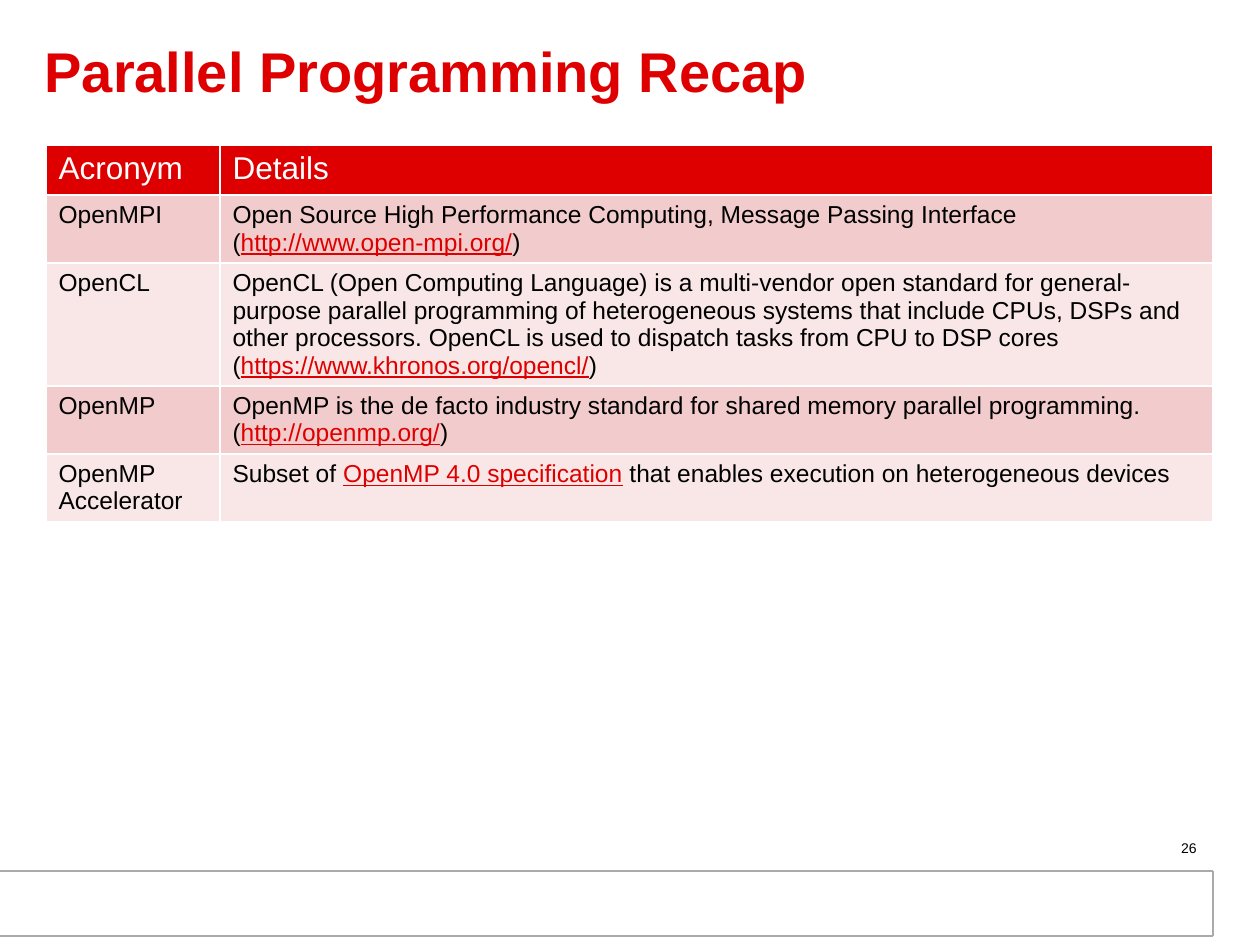
from lxml import etree
from pptx import Presentation
from pptx.dml.color import RGBColor
from pptx.enum.shapes import MSO_CONNECTOR, MSO_SHAPE
from pptx.enum.text import MSO_ANCHOR, PP_ALIGN
from pptx.oxml.ns import qn
from pptx.util import Emu, Pt

LEFT, RIGHT = PP_ALIGN.LEFT, PP_ALIGN.RIGHT
MIDDLE = MSO_ANCHOR.MIDDLE
RECT, STRAIGHT = MSO_SHAPE.RECTANGLE, MSO_CONNECTOR.STRAIGHT
FONT = "Arial"
RED, BLACK, WHITE, GRAY = "DE0000", "000000", "FFFFFF", "AAAAAA"
BANDS = ["F2CCCC", "F9E7E7"]
COL_WIDTHS = [174, 993]
ROW_HEIGHTS = [50, 68, 123, 68, 67]

HEADER = ["Acronym", "Details"]
ROWS = [
    ("OpenMPI", [
        ["Open Source High Performance Computing, Message Passing Interface"],
        ["(", "http://www.open-mpi.org/", ")"]]),
    ("OpenCL", [
        ["OpenCL (Open Computing Language) is a multi-vendor open standard for "
         "general-purpose parallel programming of heterogeneous systems that "
         "include CPUs, DSPs and other processors. OpenCL is used to dispatch "
         "tasks from CPU to DSP cores"],
        ["(", "https://www.khronos.org/opencl/", ")"]]),
    ("OpenMP", [
        ["OpenMP is the de facto industry standard for shared memory parallel "
         "programming."],
        ["(", "http://openmp.org/", ")"]]),
    ("OpenMP Accelerator", [
        ["Subset of ", "OpenMP 4.0 specification",
         " that enables execution on heterogeneous devices"]]),
]


def px(n):
    """Turn pixels at 126 to the inch into EMU."""
    return Emu(round(n * 914400 / 126))


def rgb(color):
    """Turn a hex string into a colour."""
    return RGBColor.from_string(color)


def set_font(font, size, color, bold=False):
    """Format a font."""
    font.name, font.size, font.bold = FONT, Pt(size), bold
    font.color.rgb = rgb(color)


def add_title(s, text):
    """Fill and place the title placeholder."""
    sp = s.shapes.title
    sp.left, sp.top, sp.width, sp.height = px(32), px(19), px(1165), px(112)
    tf = sp.text_frame
    tf.text, tf.vertical_anchor = text, MIDDLE
    p = tf.paragraphs[0]
    p.alignment, p.line_spacing = LEFT, 0.85
    set_font(p.font, 32, RED, True)


def add_line(s, x1, y1, x2, y2):
    """Draw a thin gray line without a shadow."""
    line = s.shapes.add_connector(STRAIGHT, px(x1), px(y1), px(x2), px(y2))
    line.line.color.rgb, line.line.width = rgb(GRAY), Pt(0.75)
    etree.SubElement(line._element.spPr, qn("a:effectLst"))


def add_footer_frame(s):
    """Draw the white footer strip and its three edges."""
    sp = s.shapes.add_shape(RECT, px(6), px(872), px(1205), px(63))
    sp.shadow.inherit = False
    sp.fill.solid()
    sp.fill.fore_color.rgb = rgb(WHITE)
    sp.line.fill.background()
    for y in (936, 871):
        add_line(s, -1, y, 1213, y)
    add_line(s, 1213, 936, 1213, 871)


def fill_cell(cell, paragraphs, size, color, fill):
    """Write paragraphs of runs, every second run styled as a link."""
    cell.fill.solid()
    cell.fill.fore_color.rgb = rgb(fill)
    tf = cell.text_frame
    for i, runs in enumerate(paragraphs):
        p = tf.add_paragraph() if i else tf.paragraphs[0]
        for j, text in enumerate(runs):
            r = p.add_run()
            r.text = text
            is_link = j % 2 == 1
            set_font(r.font, size, RED if is_link else color)
            r.font.underline = is_link


def add_recap_table(s):
    """Add the table of acronyms with banded rows."""
    frame = s.shapes.add_table(len(ROW_HEIGHTS), len(COL_WIDTHS), px(46), px(145),
                               px(sum(COL_WIDTHS)), px(sum(ROW_HEIGHTS)))
    table = frame.table
    for col, width in zip(table.columns, COL_WIDTHS):
        col.width = px(width)
    for row, height in zip(table.rows, ROW_HEIGHTS):
        row.height = px(height)
    for c, text in enumerate(HEADER):
        fill_cell(table.cell(0, c), [[text]], 18, WHITE, RED)
    for i, (acronym, details) in enumerate(ROWS):
        for c, paragraphs in enumerate([[[acronym]], details]):
            fill_cell(table.cell(i + 1, c), paragraphs, 14, BLACK, BANDS[i % 2])


def add_page_number(s, text):
    """Add the right-aligned page number."""
    tf = s.shapes.add_textbox(px(916), px(833), px(293), px(29)).text_frame
    tf.word_wrap, tf.text = True, text
    p = tf.paragraphs[0]
    p.alignment = RIGHT
    set_font(p.font, 8, BLACK)


def main():
    """Build and save the slide."""
    prs = Presentation()
    prs.slide_width, prs.slide_height = px(1260), px(945)
    s = prs.slides.add_slide(prs.slide_layouts[5])
    add_footer_frame(s)
    add_title(s, "Parallel Programming Recap")
    add_recap_table(s)
    add_page_number(s, "26")
    prs.save("out.pptx")


if __name__ == "__main__":
    main()
